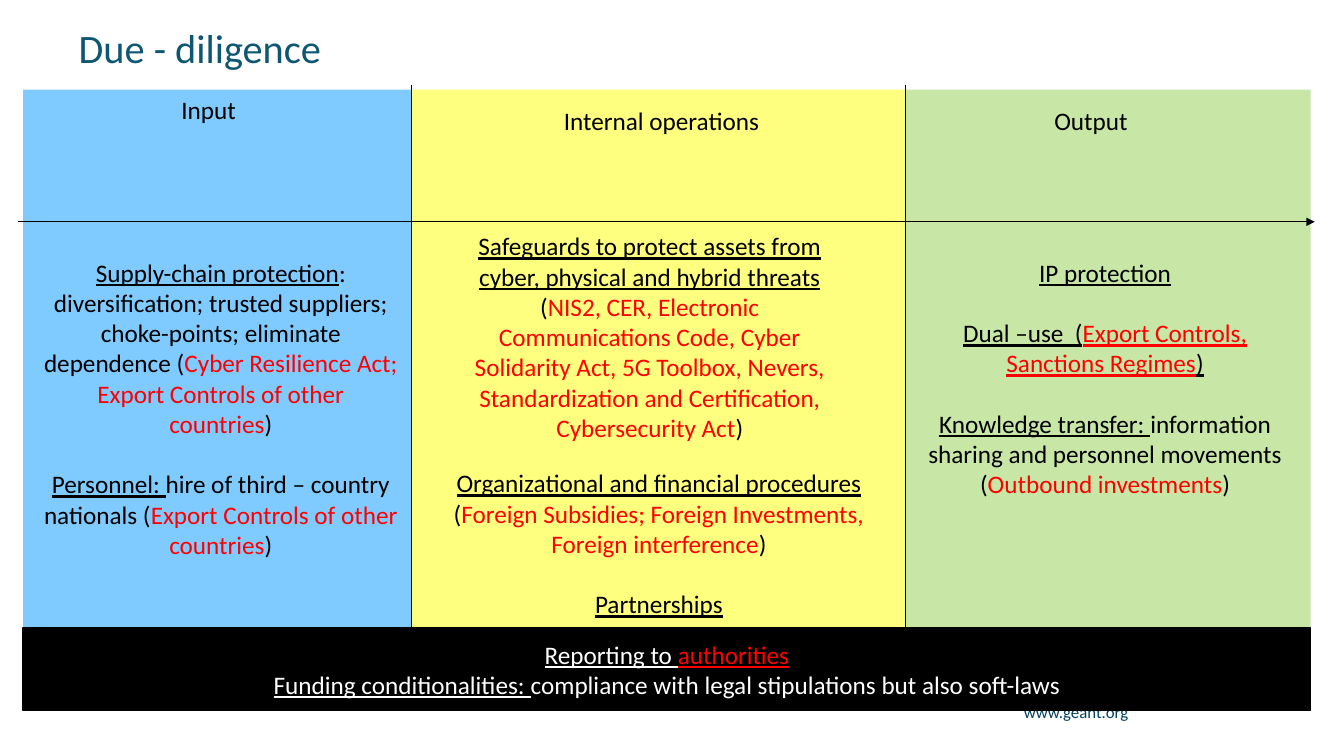
"""Build the due-diligence slide: three process columns over a reporting bar."""
from lxml import etree
from pptx import Presentation
from pptx.dml.color import RGBColor
from pptx.enum import shapes, text
from pptx.oxml import ns
from pptx.util import Inches, Pt

COLORS = {"black": "000000", "white": "FFFFFF", "red": "FF0000", "title": "0E5772",
          "footer": "03435F", "input": "0099FF", "internal": "FFFF00", "output": "92D050"}
CENTER, RIGHT = text.PP_ALIGN.CENTER, text.PP_ALIGN.RIGHT


def write(shape, paragraphs, size=18, align=CENTER, gap=0):
    """Fill a shape with paragraphs made of (text, color, underline) runs."""
    frame = shape.text_frame
    frame.word_wrap = True
    for index, runs in enumerate(paragraphs):
        paragraph = frame.add_paragraph() if index else frame.paragraphs[0]
        paragraph.alignment = align
        if index and gap:
            paragraph.space_before = Pt(gap)
        for words, color, underline in runs:
            run = paragraph.add_run()
            run.text = words
            run.font.name = "Calibri"
            run.font.size = Pt(size)
            run.font.underline = underline
            run.font.color.rgb = RGBColor.from_string(COLORS[color])


def add_block(left, top, width, height, color):
    """Add a plain filled rectangle."""
    block = slide.shapes.add_shape(shapes.MSO_SHAPE.RECTANGLE, Inches(left), Inches(top),
                                   Inches(width), Inches(height))
    block.shadow.inherit = False
    block.fill.solid()
    block.fill.fore_color.rgb = RGBColor.from_string(COLORS[color])
    block.line.fill.background()
    return block


presentation = Presentation()
presentation.slide_width, presentation.slide_height = Inches(13.33), Inches(7.5)
slide = presentation.slides.add_slide(presentation.slide_layouts[5])

title = slide.shapes.title
title.left, title.top, title.width, title.height = map(Inches, (0.68, 0.27, 10.82, 0.47))
title.text_frame.vertical_anchor = text.MSO_ANCHOR.MIDDLE
write(title, [[("Due - diligence", "title", False)]], 28.8, text.PP_ALIGN.LEFT)
title.text_frame.paragraphs[0].line_spacing = 0.9

footer = slide.shapes.add_textbox(Inches(9.61), Inches(6.91), Inches(1.68), Inches(0.36))
write(footer, [[("www.geant.org", "footer", False)]], 12, RIGHT)

for left, width, color in [(0.23, 3.85, "input"), (8.98, 4.02, "output"), (4.08, 4.9, "internal")]:
    column = add_block(left, 0.89, width, 6, color)
    fill_color = column.fill._xPr.find(ns.qn("a:solidFill"))[0]
    etree.SubElement(fill_color, ns.qn("a:alpha"), val="50000")

axes = slide.shapes.add_group_shape()
for x1, y1, x2, y2 in [(0.18, 2.2, 13.04, 2.2), (4.08, 0.84, 4.08, 6.94), (8.98, 0.84, 8.98, 6.88)]:
    axis = axes.shapes.add_connector(shapes.MSO_CONNECTOR.STRAIGHT, Inches(x1), Inches(y1),
                                     Inches(x2), Inches(y2))
    axis.line.color.rgb = RGBColor.from_string(COLORS["black"])
    axis.line.width = Pt(1)
    if y1 == y2:
        etree.SubElement(axis.line._get_or_add_ln(), ns.qn("a:tailEnd"), type="triangle")
    etree.SubElement(axis._element.spPr, ns.qn("a:effectLst"))

text_boxes = [
    (0.23, 0.89, 3.68, 0.4, [[("Input", "black", False)]]),
    (4.72, 1, 3.68, 0.4, [[("Internal operations", "black", False)]]),
    (8.98, 1, 3.68, 0.4, [[("Output", "black", False)]]),
    (0.33, 2.5, 3.72, 3.13, [
        [("Supply-chain protection", "black", True),
         (": diversification; trusted suppliers; choke-points; eliminate dependence (", "black", False),
         ("Cyber Resilience Act; Export Controls of other countries", "red", False),
         (")", "black", False)],
        [("Personnel: ", "black", True),
         ("hire of third – country nationals (", "black", False),
         ("Export Controls of other countries", "red", False),
         (")", "black", False)]]),
    (4.38, 2.24, 4.13, 2.22, [
        [("Safeguards to protect assets from cyber, physical and hybrid threats ", "black", True),
         ("(", "black", False),
         ("NIS2, CER, Electronic Communications Code, Cyber Solidarity Act, 5G Toolbox, Nevers, "
          "Standardization and Certification, Cybersecurity Act", "red", False),
         (")", "black", False)]]),
    (4.29, 4.59, 4.49, 1.62, [
        [("Organizational and financial procedures ", "black", True),
         ("(", "black", False),
         ("Foreign Subsidies; Foreign Investments, Foreign interference", "red", False),
         (")", "black", False)],
        [("Partnerships", "black", True)]]),
    (9.1, 2.5, 3.72, 2.52, [
        [("IP protection", "black", True)],
        [("Dual –use  (", "black", True),
         ("Export Controls, Sanctions Regimes", "red", True),
         (")", "black", True)],
        [("Knowledge transfer: ", "black", True),
         ("information sharing and personnel movements (", "black", False),
         ("Outbound investments", "red", False),
         (")", "black", False)]]),
]
for left, top, width, height, paragraphs in text_boxes:
    box = slide.shapes.add_textbox(Inches(left), Inches(top), Inches(width), Inches(height))
    write(box, paragraphs, gap=21.6)

reporting_bar = add_block(0.23, 6.23, 12.77, 0.82, "black")
reporting_bar.line.color.rgb = RGBColor.from_string(COLORS["black"])
reporting_bar.line.width = Pt(1)
reporting_bar.text_frame.vertical_anchor = text.MSO_ANCHOR.MIDDLE
write(reporting_bar, [
    [("Reporting to ", "white", True), ("authorities", "red", True)],
    [("Funding conditionalities: ", "white", True),
     ("compliance with legal stipulations but also soft-laws", "white", False)]])

presentation.save("out.pptx")
